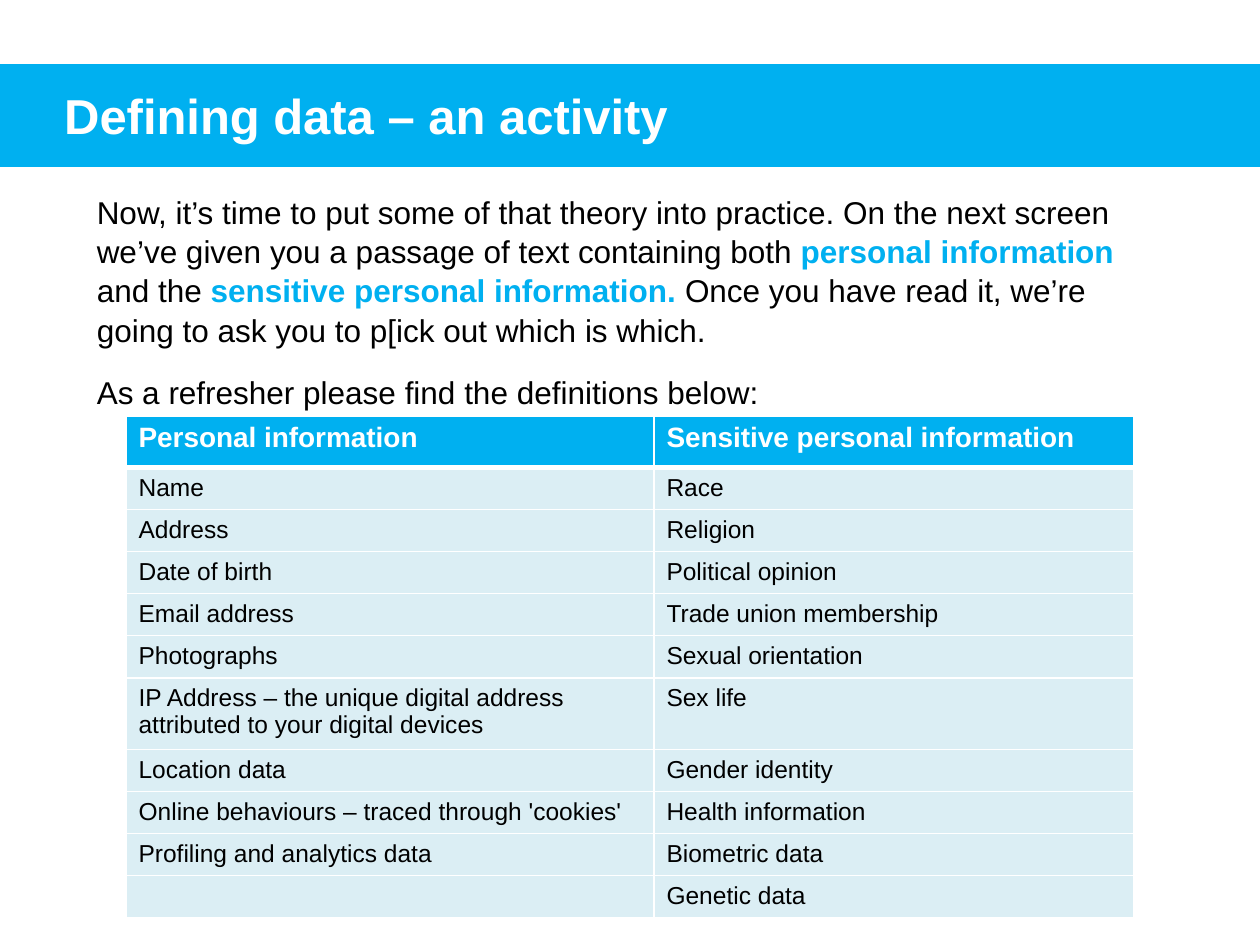
from lxml.etree import SubElement
from pptx import Presentation
from pptx.dml.color import RGBColor
from pptx.enum.shapes import MSO_SHAPE
from pptx.enum.text import MSO_ANCHOR, PP_ALIGN
from pptx.oxml.ns import qn
from pptx.util import Inches, Pt

COLORS = {"accent": "00B0F0", "row": "DBEEF4", "white": "FFFFFF", "black": "000000"}
FONT = "Arial"

TITLE = "Defining data – an activity"
# Each paragraph is a list of (text, highlighted) spans.
INTRO = [
    [
        ("Now, it’s time to put some of that theory into practice. On the next screen "
         "we’ve given you a passage of text containing both ", False),
        ("personal information", True),
        (" and the ", False),
        ("sensitive personal information. ", True),
        ("Once you have read it, we’re going to ask you to p[ick out which is which.", False),
    ],
    [("As a refresher please find the definitions below:", False)],
]
DEFINITIONS = [
    ("Personal information", "Sensitive personal information"),
    ("Name", "Race"),
    ("Address", "Religion"),
    ("Date of birth", "Political opinion"),
    ("Email address", "Trade union membership"),
    ("Photographs", "Sexual orientation"),
    ("IP Address – the unique digital address attributed to your digital devices", "Sex life"),
    ("Location data", "Gender identity"),
    ("Online behaviours – traced through 'cookies'", "Health information"),
    ("Profiling and analytics data", "Biometric data"),
    ("", "Genetic data"),
]
COLUMN_WIDTHS = (4.19, 3.81)
HEADER_HEIGHT, ROW_HEIGHT, TWO_LINE_HEIGHT = 0.41, 0.333, 0.57
TWO_LINE_ROW = 6


def color(name):
    return RGBColor.from_string(COLORS[name])


def style(font, size, color_name, bold=False):
    font.name, font.size, font.bold = FONT, Pt(size), bold
    font.color.rgb = color(color_name)


def add_title_band(page):
    band = page.shapes.add_shape(
        MSO_SHAPE.RECTANGLE, Inches(-0.59), Inches(0.52), Inches(11.26), Inches(0.79))
    band.shadow.inherit = False
    band.fill.solid()
    band.fill.fore_color.rgb = color("accent")
    band.line.color.rgb = color("accent")
    band.line.width = Pt(2)
    frame = band.text_frame
    frame.margin_left = Inches(1.1)
    frame.vertical_anchor = MSO_ANCHOR.MIDDLE
    frame.text = TITLE
    para = frame.paragraphs[0]
    para.alignment = PP_ALIGN.LEFT
    style(para.runs[0].font, 28, "white", bold=True)


def add_intro(page):
    box = page.shapes.add_textbox(Inches(0.67), Inches(1.47), Inches(8.5), Inches(2.42))
    frame = box.text_frame
    frame.word_wrap = True
    for index, spans in enumerate(INTRO):
        para = frame.add_paragraph() if index else frame.paragraphs[0]
        para.line_spacing = 1.04
        para.space_before = Pt(13 if index else 0)
        for text, highlighted in spans:
            span = para.add_run()
            span.text = text
            style(span.font, 18, "accent" if highlighted else "black", highlighted)


def set_borders(cell, bottom_width):
    """Draw white lines around a cell; they must precede its fill in the XML."""
    properties = cell._tc.get_or_add_tcPr()
    for side in ("L", "R", "T", "B"):
        width = bottom_width if side == "B" else 1
        line = SubElement(properties, qn(f"a:ln{side}"), w=str(Pt(width)))
        fill = SubElement(line, qn("a:solidFill"))
        SubElement(fill, qn("a:srgbClr"), val=COLORS["white"])


def add_definitions(page):
    heights = [ROW_HEIGHT] * len(DEFINITIONS)
    heights[0], heights[TWO_LINE_ROW] = HEADER_HEIGHT, TWO_LINE_HEIGHT
    table = page.shapes.add_table(
        len(DEFINITIONS), len(COLUMN_WIDTHS), Inches(1), Inches(3.3),
        Inches(sum(COLUMN_WIDTHS)), Inches(sum(heights))).table
    for column, width in zip(table.columns, COLUMN_WIDTHS):
        column.width = Inches(width)
    for row_index, (row, height, texts) in enumerate(zip(table.rows, heights, DEFINITIONS)):
        row.height = Inches(height)
        header = row_index == 0
        for cell, text in zip(row.cells, texts):
            set_borders(cell, 3 if header else 1)
            cell.fill.solid()
            cell.fill.fore_color.rgb = color("accent" if header else "row")
            cell.text = text
            para = cell.text_frame.paragraphs[0]
            style(para.font, 14, "black")
            for span in para.runs:
                style(span.font, 16 if header else 14, "white" if header else "black", header)


def main():
    deck = Presentation()
    deck.slide_width, deck.slide_height = Inches(10), Inches(7.5)
    page = deck.slides.add_slide(deck.slide_layouts[6])
    add_title_band(page)
    add_intro(page)
    add_definitions(page)
    deck.save("out.pptx")


if __name__ == "__main__":
    main()
